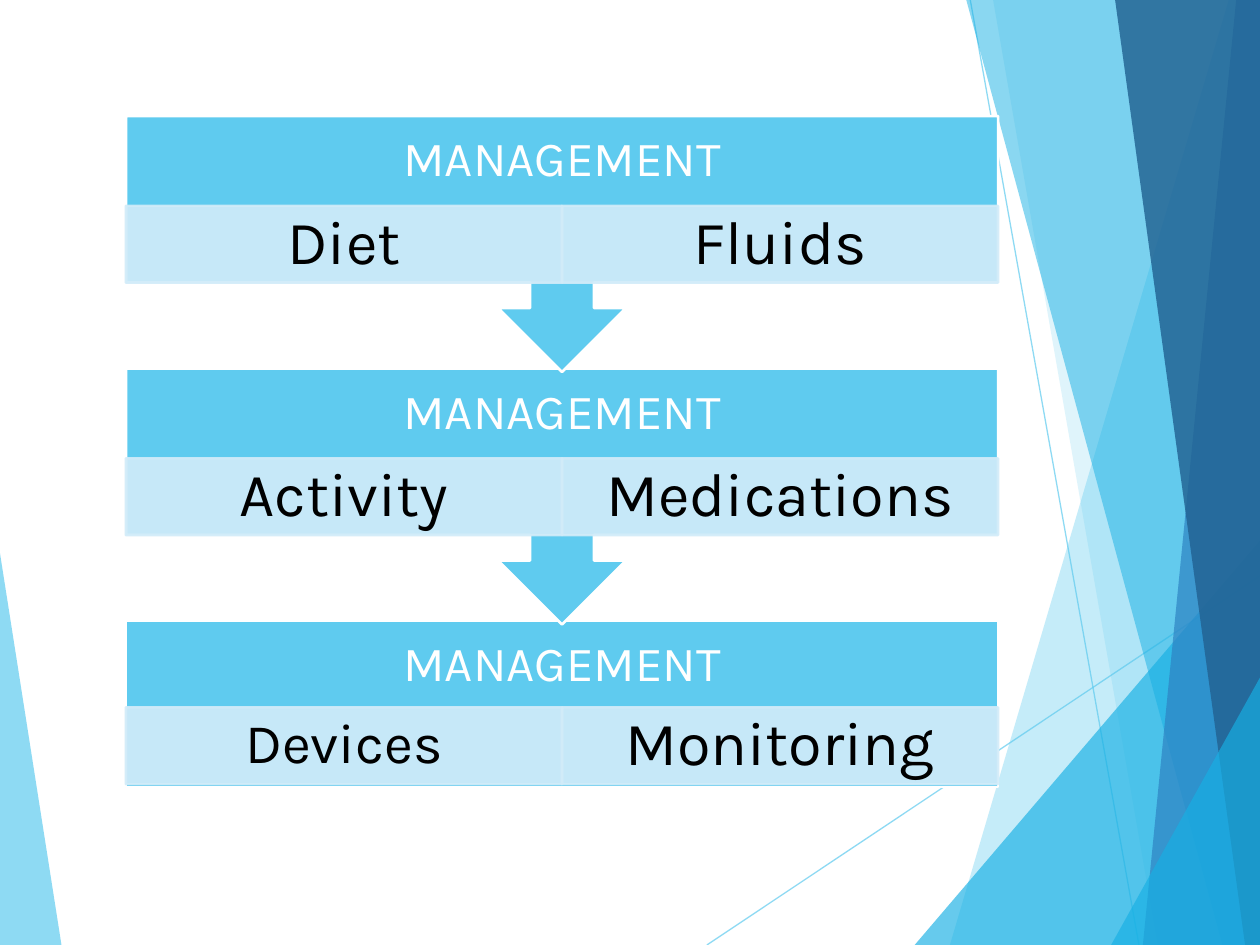
import pptx
import pptx.util
import pptx.dml.color
import pptx.enum.shapes
import pptx.enum.text
import pptx.oxml.ns
import lxml.etree

Cm = pptx.util.Cm
Pt = pptx.util.Pt
Kind = pptx.enum.shapes.MSO_SHAPE
qn = pptx.oxml.ns.qn

WIDE, HIGH = 25.4, 19.05
SKY, BLUE, PALE = "5FCBEF", "17B0E4", "D2ECF9"

# Panel grid in cm
LEFT, SPAN = 2.54, 17.58
TOP, STEP = 2.34, 5.09
HEAD, CELL = 1.81, 1.55
CALL, LAST = 5.16, 3.35

PANELS = [("Diet", "Fluids"), ("Activity", "Medications"),
          ("Devices", "Monitoring")]
SMALL = {"Devices": 32}


def paint(fill, color, alpha=100):
    """Give a fill a solid colour, see-through if alpha is under 100."""
    fill.solid()
    fill.fore_color.rgb = pptx.dml.color.RGBColor.from_string(color)
    if alpha < 100:
        node = fill._xPr.find(qn("a:solidFill"))[0]
        lxml.etree.SubElement(node, qn("a:alpha")).set("val", str(alpha * 1000))


def write(shape, text, size=35, color="000000", side=0.69, edge=0.13):
    frame = shape.text_frame
    frame.word_wrap = True
    frame.vertical_anchor = pptx.enum.text.MSO_ANCHOR.MIDDLE
    frame.margin_left = frame.margin_right = Cm(side)
    frame.margin_top = frame.margin_bottom = Cm(edge)
    para = frame.paragraphs[0]
    para.alignment = pptx.enum.text.PP_ALIGN.CENTER
    para.line_spacing = 0.9
    run = para.add_run()
    run.text = text
    run.font.name = "Karla"
    run.font.size = Pt(size)
    paint(run.font.fill, color)


def block(slide, kind, x, y, w, h, color, edge, alpha=100):
    shape = slide.shapes.add_shape(kind, Cm(x), Cm(y), Cm(w), Cm(h))
    shape.shadow.inherit = False
    paint(shape.fill, color, alpha)
    paint(shape.line.fill, edge, alpha)
    shape.line.width = Pt(1.5)
    return shape


def facet(slide, color, alpha, *points):
    spots = [(Cm(x), Cm(y)) for x, y in points]
    path = slide.shapes.build_freeform(*spots[0])
    path.add_line_segments(spots[1:], close=True)
    shape = path.convert_to_shape()
    shape.shadow.inherit = False
    paint(shape.fill, color, alpha)
    shape.line.fill.background()


def wedge(slide, color, alpha, top, base):
    """Full-height band from a slanted edge to the right side."""
    facet(slide, color, alpha, (top, 0), (base, HIGH), (WIDE, HIGH), (WIDE, 0))


def corner(slide, base, rise):
    """Triangle in the lower right corner."""
    facet(slide, BLUE, 66, (base, HIGH), (WIDE, rise), (WIDE, HIGH))


def streak(slide, *ends):
    line = slide.shapes.add_connector(
        pptx.enum.shapes.MSO_CONNECTOR.STRAIGHT, *[Cm(v) for v in ends])
    paint(line.line.fill, SKY, 70)
    line.line.width = Pt(0.75)
    lxml.etree.SubElement(line._element.spPr, qn("a:effectLst"))


def decor(slide):
    facet(slide, SKY, 70, (0, 11.15), (1.24, HIGH), (0, HIGH))
    streak(slide, 14.25, HIGH, WIDE, 11.61)
    streak(slide, 19.56, 0, 22.96, HIGH)
    wedge(slide, SKY, 36, 24.77, 19.15)
    wedge(slide, SKY, 20, 20.02, 23.34)
    corner(slide, 18.44, 10.9)
    wedge(slide, BLUE, 50, 19.48, 24.64)
    wedge(slide, "2E83C3", 70, 24.92, 23.04)
    wedge(slide, "226292", 82, 22.48, 25.1)
    corner(slide, 22.4, 13.66)


def panel(slide, y, words, last):
    # Frame: the last one has no arrow
    if last:
        block(slide, Kind.RECTANGLE, LEFT, y, SPAN, LAST, SKY, "FFFFFF")
    else:
        call = block(slide, Kind.UP_ARROW_CALLOUT, LEFT, y, SPAN, CALL,
                     SKY, "FFFFFF")
        call.rotation = 180
    # Heading
    box = slide.shapes.add_textbox(Cm(LEFT), Cm(y), Cm(SPAN), Cm(HEAD))
    write(box, "MANAGEMENT", size=28, color="FFFFFF", side=0.56, edge=0.56)
    # Two cells side by side
    row = y + (1.74 if last else HEAD)
    half = SPAN / 2
    for col, word in enumerate(words):
        cell = block(slide, Kind.RECTANGLE, LEFT + col * half, row, half, CELL,
                     PALE, PALE, alpha=90)
        write(cell, word, size=SMALL.get(word, 35))


def main():
    deck = pptx.Presentation()
    deck.slide_width, deck.slide_height = Cm(WIDE), Cm(HIGH)
    slide = deck.slides.add_slide(deck.slide_layouts[6])
    decor(slide)
    # From the bottom up, so that each arrow lies over the next panel
    end = len(PANELS) - 1
    for num in range(end, -1, -1):
        panel(slide, TOP + num * STEP, PANELS[num], num == end)
    deck.save("out.pptx")


if __name__ == "__main__":
    main()
